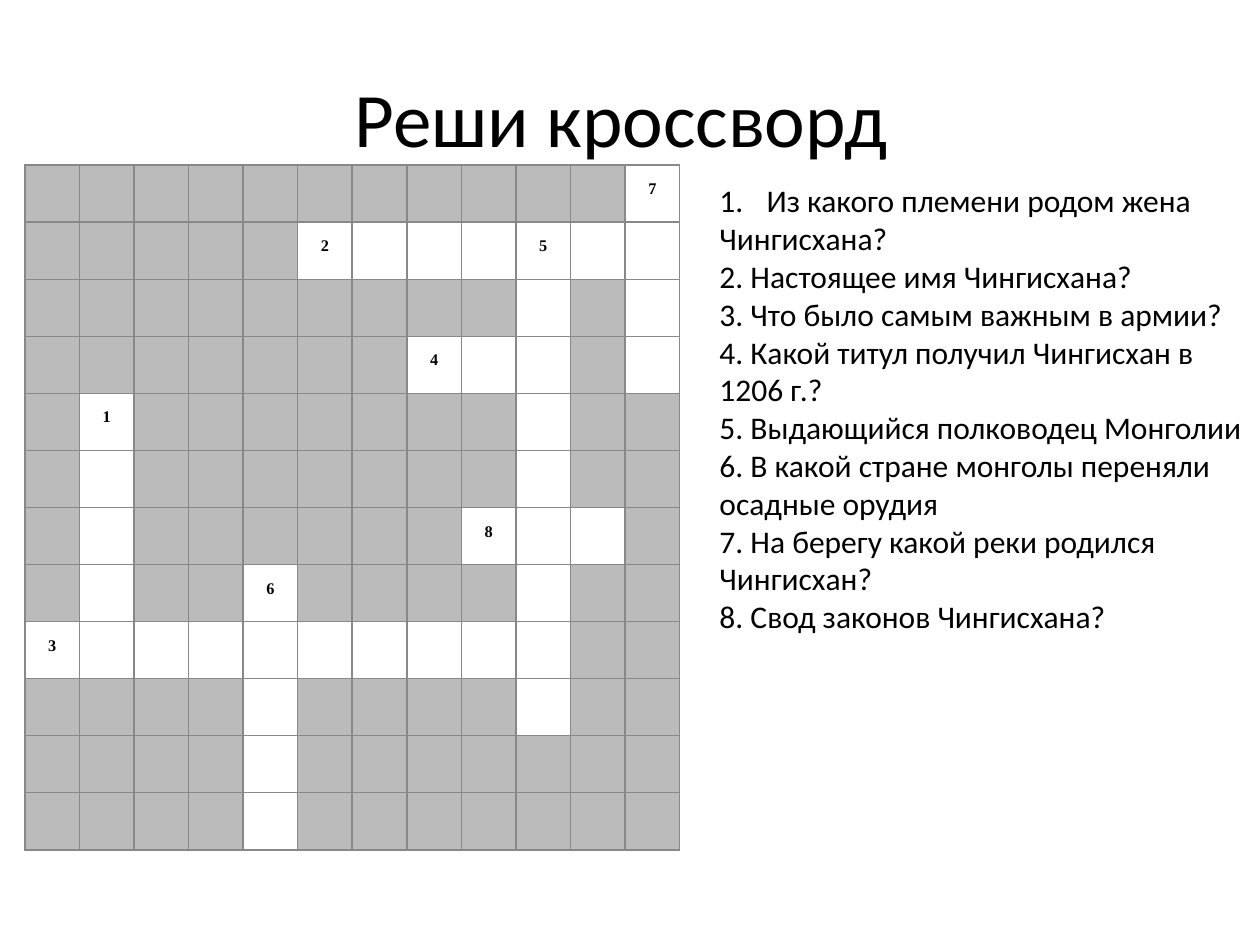
from dataclasses import dataclass

from lxml import etree
from pptx import Presentation, util as u
from pptx.dml.color import RGBColor
from pptx.enum import text
from pptx.oxml import ns


@dataclass(frozen=True)
class Theme:
    ink: str = "000000"
    blocked: str = "BBBBBB"
    grid: str = "888888"
    main_font: str = "Calibri"
    number_font: str = "Times New Roman"
    title_size: int = 44
    clue_size: int = 18
    number_size: int = 16


GRID_SIZE = 12
ACROSS, DOWN = (0, 1), (1, 0)
WORDS = [
    (1, 4, 1, DOWN, 5),
    (2, 1, 5, ACROSS, 7),
    (3, 8, 0, ACROSS, 10),
    (4, 3, 7, ACROSS, 3),
    (5, 1, 9, DOWN, 9),
    (6, 7, 4, DOWN, 5),
    (7, 0, 11, DOWN, 4),
    (8, 6, 8, ACROSS, 3),
]
CLUES = [
    "Из какого племени родом жена",
    "Чингисхана?",
    "2. Настоящее имя Чингисхана?",
    "3. Что было самым важным в армии?",
    "4. Какой титул получил Чингисхан в",
    "1206 г.?",
    "5. Выдающийся полководец Монголии",
    "6. В какой стране монголы переняли",
    "осадные орудия",
    "7. На берегу какой реки родился",
    "Чингисхан?",
    "8. Свод законов Чингисхана?",
]


class CrosswordPage:
    """Builds the parts of a crossword slide in one style."""

    def __init__(self, deck, theme):
        self.theme = theme
        self.page = deck.slides.add_slide(deck.slide_layouts[1])

    def place(self, box, left, top, width, height):
        box.left, box.top = u.Cm(left), u.Cm(top)
        box.width, box.height = u.Cm(width), u.Cm(height)

    def add_words(self, para, words, size, name, bold=False):
        span = para.add_run()
        span.text = words
        for font in (para.font, span.font):
            font.size, font.name, font.bold = u.Pt(size), name, bold
            font.color.rgb = RGBColor.from_string(self.theme.ink)
        return span

    def title(self, words, *area):
        box = self.page.shapes.title
        self.place(box, *area)
        box.text_frame.vertical_anchor = text.MSO_ANCHOR.MIDDLE
        para = box.text_frame.paragraphs[0]
        para.alignment = text.PP_ALIGN.CENTER
        self.add_words(para, words, self.theme.title_size, self.theme.main_font)

    def clues(self, lines, *area):
        box = self.page.placeholders[1]
        self.place(box, *area)
        frame = box.text_frame
        frame.word_wrap = True
        frame.auto_size = text.MSO_AUTO_SIZE.NONE
        frame.vertical_anchor = text.MSO_ANCHOR.TOP
        for index, line in enumerate(lines):
            para = frame.add_paragraph() if index else frame.paragraphs[0]
            para.space_before = u.Pt(0)
            props = para._p.get_or_add_pPr()
            props.set("marL", str(u.Cm(0.95)))
            props.set("indent", str(u.Cm(-0.95)))
            if index:
                etree.SubElement(props, ns.qn("a:buNone"))
            else:
                etree.SubElement(props, ns.qn("a:buFont"), typeface="+mj-lt")
                etree.SubElement(props, ns.qn("a:buAutoNum"), type="arabicPeriod")
            self.add_words(para, line, self.theme.clue_size, self.theme.main_font)

    def borders(self, cell):
        props = cell._tc.get_or_add_tcPr()
        for index, side in enumerate(("lnL", "lnR", "lnT", "lnB")):
            line = etree.Element(ns.qn(f"a:{side}"), w=str(u.Pt(1)))
            fill = etree.SubElement(line, ns.qn("a:solidFill"))
            etree.SubElement(fill, ns.qn("a:srgbClr"), val=self.theme.grid)
            props.insert(index, line)

    def number(self, cell, value):
        cell.margin_left = cell.margin_right = cell.margin_top = cell.margin_bottom = 0
        cell.vertical_anchor = text.MSO_ANCHOR.MIDDLE
        para = cell.text_frame.paragraphs[0]
        para.alignment = text.PP_ALIGN.CENTER
        para.space_after = u.Pt(6)
        span = self.add_words(para, str(value), self.theme.number_size, self.theme.number_font, True)
        span._r.get_or_add_rPr().set("baseline", "30000")

    def crossword(self, words, left, top, width, height):
        table = self.page.shapes.add_table(
            GRID_SIZE, GRID_SIZE, u.Cm(left), u.Cm(top), u.Cm(width), u.Cm(height)
        ).table
        table.first_row = table.horz_banding = False
        numbers = {(row, col): value for value, row, col, _, _ in words}
        opened = {
            (row + step * down, col + step * right)
            for _, row, col, (down, right), length in words
            for step in range(length)
        }
        for row in range(GRID_SIZE):
            for col in range(GRID_SIZE):
                cell = table.cell(row, col)
                if (row, col) in opened:
                    cell.fill.background()
                else:
                    cell.fill.solid()
                    cell.fill.fore_color.rgb = RGBColor.from_string(self.theme.blocked)
                if (row, col) in numbers:
                    self.number(cell, numbers[row, col])
                self.borders(cell)


def main():
    deck = Presentation()
    deck.slide_width, deck.slide_height = u.Cm(25.4), u.Cm(19.05)
    page = CrosswordPage(deck, Theme())
    page.title("Реши кроссворд ", 1.27, 0.76, 22.86, 3.18)
    page.crossword(WORDS, 0.5, 3.33, 13.2, 13.8)
    page.clues(CLUES, 14.25, 3.53, 11.15, 10.26)
    deck.save("out.pptx")


if __name__ == "__main__":
    main()
